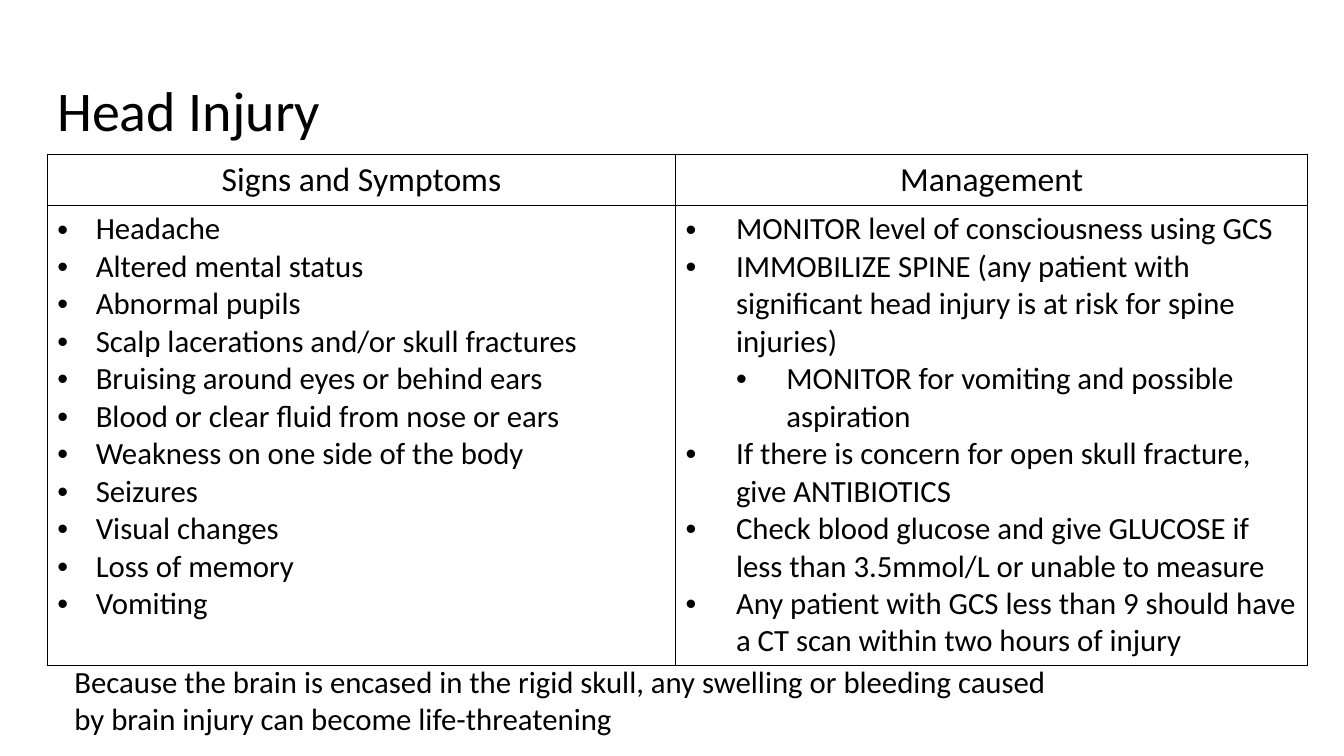
from dataclasses import dataclass

from lxml.etree import SubElement as Sub
from pptx import Presentation
from pptx.dml.color import RGBColor as Rgb
from pptx.enum.text import MSO_ANCHOR as Anchor, PP_ALIGN as Align
from pptx.oxml.ns import qn
from pptx.util import Inches, Pt


@dataclass(frozen=True)
class Theme:
    ink: Rgb = Rgb(0, 0, 0)
    face: str = "Calibri"
    title: int = 40
    head: int = 24
    body: int = 22
    rule: int = 1


@dataclass(frozen=True)
class Item:
    text: str
    level: int = 0


@dataclass(frozen=True)
class Column:
    head: str
    width: float
    hang: float
    items: tuple[Item, ...]


@dataclass(frozen=True)
class Label:
    text: str
    box: tuple[float, float, float, float]
    size: int
    anchor: Anchor
    indent: float = 0
    spacing: float = 1


THEME = Theme()
LEFT, TOP = 0.47, 1.53
ROWS = (0.51, 4.55)

SIGNS = Column("Signs and Symptoms", 6.23, 0.38, (
    Item("Headache"),
    Item("Altered mental status"),
    Item("Abnormal pupils"),
    Item("Scalp lacerations and/or skull fractures"),
    Item("Bruising around eyes or behind ears"),
    Item("Blood or clear fluid from nose or ears"),
    Item("Weakness on one side of the body"),
    Item("Seizures"),
    Item("Visual changes"),
    Item("Loss of memory"),
    Item("Vomiting"),
))
CARE = Column("Management", 6.27, 0.5, (
    Item("MONITOR level of consciousness using GCS"),
    Item("IMMOBILIZE SPINE (any patient with significant head injury "
         "is at risk for spine injuries)"),
    Item("MONITOR for vomiting and possible aspiration", 1),
    Item("If there is concern for open skull fracture, give ANTIBIOTICS"),
    Item("Check blood glucose and give GLUCOSE if less than 3.5mmol/L "
         "or unable to measure"),
    Item("Any patient with GCS less than 9 should have a CT scan "
         "within two hours of injury"),
))
COLUMNS = (SIGNS, CARE)

LABELS = (
    Label("Head Injury", (LEFT, 0.4, 12.4, 1.45), THEME.title,
          Anchor.MIDDLE, spacing=0.9),
    Label("Because the brain is encased in the rigid skull, any swelling or "
          "bleeding caused by brain injury can become life-threatening",
          (LEFT, 6.53, 10.14, 0.84), THEME.body, Anchor.TOP, indent=0.17),
)


def style(para, size: int) -> None:
    look = {"name": THEME.face, "size": Pt(size), "bold": False}
    for key, value in look.items():
        setattr(para.font, key, value)
    para.font.color.rgb = THEME.ink


def shift(para, left: float, first: float = 0):
    props = para._p.get_or_add_pPr()
    for key, value in {"marL": left, "indent": first}.items():
        props.set(key, str(Inches(value)))
    return props


def border(cell) -> None:
    props = cell._tc.get_or_add_tcPr()
    for side in ("lnL", "lnR", "lnT", "lnB"):
        line = Sub(props, qn(f"a:{side}"), w=str(Pt(THEME.rule)))
        fill = Sub(line, qn("a:solidFill"))
        Sub(fill, qn("a:srgbClr"), val=str(THEME.ink))
    cell.fill.background()


def fill_list(cell, column: Column) -> None:
    frame = cell.text_frame
    for i, item in enumerate(column.items):
        para = frame.add_paragraph() if i else frame.paragraphs[0]
        para.text = item.text
        para.level = item.level
        props = shift(para, column.hang * (item.level + 1), -column.hang)
        Sub(props, qn("a:buFont"), typeface="Arial")
        Sub(props, qn("a:buChar"), char="•")
        style(para, THEME.body)


def draw_table(slide, columns: tuple[Column, ...]) -> None:
    width = sum(column.width for column in columns)
    place = (Inches(v) for v in (LEFT, TOP, width, sum(ROWS)))
    table = slide.shapes.add_table(len(ROWS), len(columns), *place).table
    table.first_row = table.horz_banding = False
    for row, height in zip(table.rows, ROWS):
        row.height = Inches(height)
    for i, column in enumerate(columns):
        table.columns[i].width = Inches(column.width)
        head, body = table.cell(0, i), table.cell(1, i)
        head.text = column.head
        para = head.text_frame.paragraphs[0]
        para.alignment = Align.CENTER
        style(para, THEME.head)
        fill_list(body, column)
        for cell in (head, body):
            border(cell)


def draw_label(slide, label: Label) -> None:
    frame = slide.shapes.add_textbox(*map(Inches, label.box)).text_frame
    for key, value in {"word_wrap": True, "vertical_anchor": label.anchor}.items():
        setattr(frame, key, value)
    para = frame.paragraphs[0]
    para.text = label.text
    para.line_spacing = label.spacing
    shift(para, label.indent)
    style(para, label.size)


def main() -> None:
    deck = Presentation()
    deck.slide_width, deck.slide_height = Inches(13.33), Inches(7.5)
    slide = deck.slides.add_slide(deck.slide_layouts[6])
    # Signs and management table
    draw_table(slide, COLUMNS)
    # Title and closing note
    for label in LABELS:
        draw_label(slide, label)
    deck.save("out.pptx")


if __name__ == "__main__":
    main()
